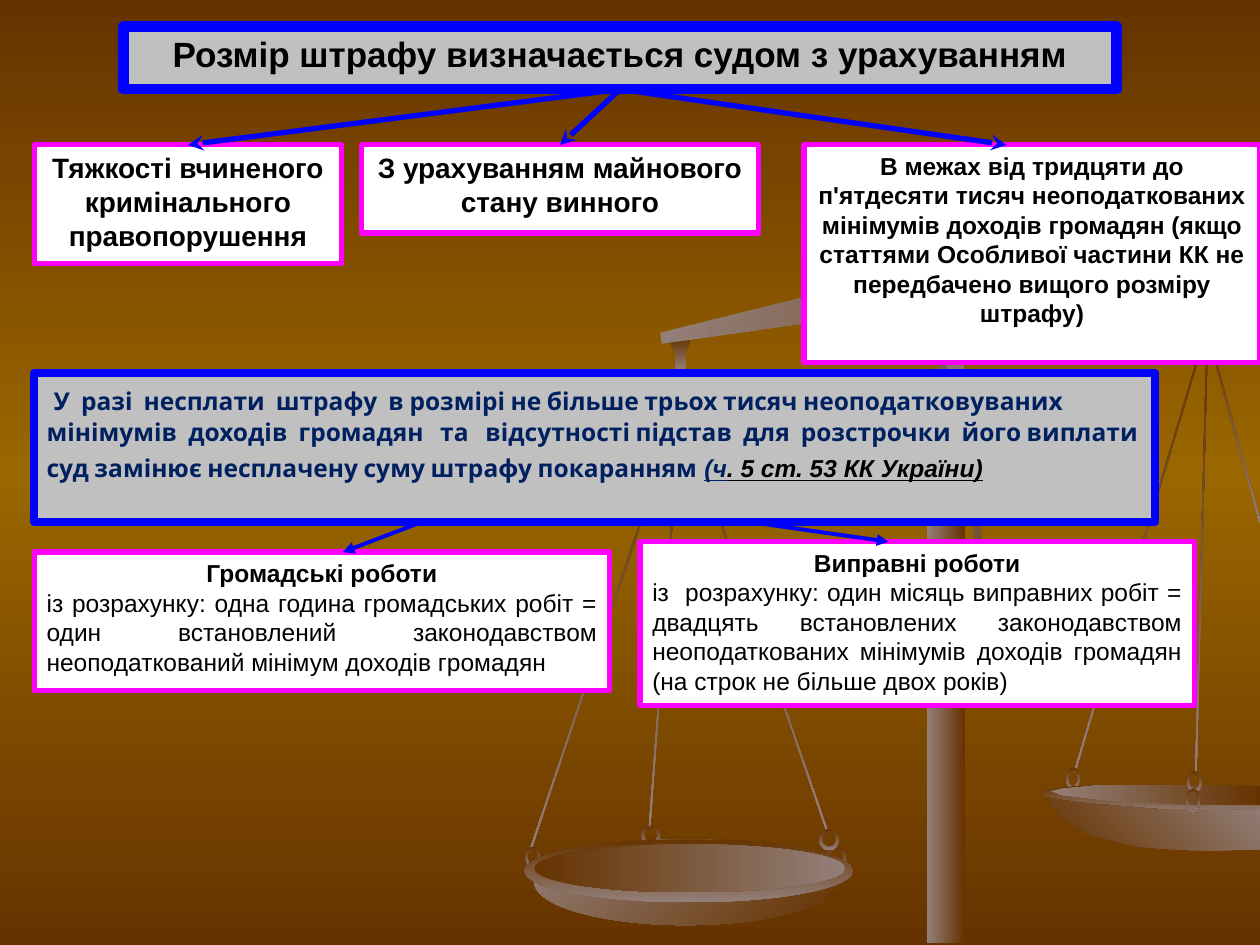
import copy
from dataclasses import dataclass

import lxml.etree
import pptx
import pptx.dml.color
import pptx.enum.shapes
import pptx.enum.text
import pptx.oxml.ns
import pptx.util

Cm, Pt = pptx.util.Cm, pptx.util.Pt
SHAPE = pptx.enum.shapes.MSO_SHAPE
ALIGN = pptx.enum.text.PP_ALIGN
qn = pptx.oxml.ns.qn

COLORS = {
    "brown": "663300", "ochre": "996600", "taupe": "937F79", "silver": "C0C0C0",
    "white": "FFFFFF", "black": "000000", "blue": "0000FF", "magenta": "FF00FF",
    "navy": "002060",
}


@dataclass
class Part:
    """Piece of the scales; angle is the clockwise gradient direction."""
    kind: object
    box: tuple
    angle: float = 90
    light_first: bool = False
    rotation: float = 0


@dataclass
class Outline:
    points: list
    angle: float = 90
    light_first: bool = False


@dataclass
class Run:
    text: str
    size: float = 14
    bold: bool = True
    color: str = "black"
    font: str = "Arial"
    emphasis: bool = False  # italic and underlined


@dataclass
class Box:
    rect: tuple
    paragraphs: list  # (alignment, runs)
    fill: str = "white"
    border: str = "magenta"
    width: float = 3


@dataclass
class Arrow:
    start: tuple
    end: tuple
    width: float = 3
    head: str = "stealth"


def rope(x, y, height, rotation):
    return Part(SHAPE.RECTANGLE, (x, y, 0.03, height), rotation=rotation)


def ring(*box):
    return Part(SHAPE.DONUT, box)


SCALES = [
    rope(22.96, 6.6, 9.14, 16.6),
    ring(21.49, 15.47, 0.28, 0.43),
    rope(24.21, 6.76, 8.81, 1.5),
    rope(24.87, 6.71, 3.89, 344.6),
    rope(15.19, 8, 8.97, 341),
    rope(12.17, 8.03, 9.35, 18.6),
    rope(13.39, 8.26, 8.41, 4.2),
    Outline([(25.4, 15.9), (24.33, 15.85), (21.6, 15.85), (21, 15.95), (21.06, 16.05),
             (21.64, 16.2), (22.7, 16.31), (24.33, 16.38), (25.4, 16.38)]),
    Outline([(21.11, 16.08), (21.39, 16.48), (21.97, 16.84), (22.94, 17.07), (23.57, 17.12),
             (24.31, 17.15), (25.4, 17.12), (25.4, 16.33), (23.32, 16.31), (21.77, 16.18)], 315),
    Outline([(25.4, 15.85), (24.28, 15.82), (22.3, 15.82), (21.41, 15.9), (21.18, 15.95),
             (21.41, 16.03), (22.3, 16.13), (23.7, 16.21), (25.4, 16.23)], 0, True),
    Outline([(13.94, 6.81), (13.49, 6.86), (13.61, 7.11), (13.61, 7.47), (13.82, 7.47),
             (13.82, 7.09)]),
    ring(13.49, 7.44, 0.41, 0.43),
    ring(23.93, 15.54, 0.3, 0.43),
    Outline([(24.71, 4.98), (24.79, 5.28), (13.34, 6.93), (13.31, 6.71), (18.72, 5.38),
             (19.28, 5.31)], 0, True),
    ring(12.93, 16.64, 0.38, 0.41),
    ring(16.66, 17.07, 0.41, 0.48),
    ring(10.59, 17.07, 0.3, 0.41),
    Part(SHAPE.OVAL, (10.77, 16.92, 6.1, 1.73), 45, True),
    Part(SHAPE.OVAL, (10.57, 16.92, 6.63, 1.27)),
    Part(SHAPE.OVAL, (10.77, 17.02, 6.27, 0.97), 0),
    ring(16.51, 16.71, 0.41, 0.43),
    ring(23.9, 15.9, 0.3, 0.48),
    Part(SHAPE.RECTANGLE, (18.69, 7.82, 0.76, 11.2), 0, True),
    Part(SHAPE.RECTANGLE, (18.9, 6.81, 0.33, 1.07)),
    Outline([(20.09, 13.69), (19.05, 7.11), (19, 6.81), (19.3, 6.73), (19.38, 7.04)], 45, True),
]

TITLE = Box((2.49, 0.53, 20.02, 1.27),
            [(ALIGN.CENTER, [Run("Розмір штрафу визначається судом з урахуванням", 20)])],
            "silver", "blue", 6)
CRITERIA = [
    Box((0.69, 2.92, 6.2, 2.39),
        [(ALIGN.CENTER, [Run("Тяжкості вчиненого кримінального правопорушення", 16)])]),
    Box((7.29, 2.92, 8, 1.78),
        [(ALIGN.CENTER, [Run("З урахуванням майнового стану винного", 16)])]),
    Box((16.21, 2.92, 9.19, 4.39),
        [(ALIGN.CENTER, [Run("В межах від тридцяти до п'ятдесяти тисяч неоподаткованих мінімумів "
                             "доходів громадян (якщо статтями Особливої частини КК не "
                             "передбачено вищого розміру штрафу)")])]),
]
REPLACEMENT = [
    Box((0.69, 7.52, 22.6, 3), [(ALIGN.LEFT, [
        Run(" ", 18, False, "navy", "Cabin"),
        Run("У  разі  несплати  штрафу  в розмірі не більше трьох тисяч неоподатковуваних  "
            "мінімумів  доходів  громадян   та   відсутності підстав  для  розстрочки  його "
            "виплати суд замінює несплачену суму штрафу покаранням", color="navy", font="Cabin"),
        Run(" ", 18, color="navy", font="Cabin"),
        Run("(ч", color="navy", emphasis=True),
        Run(". 5 ст. 53 КК України)", emphasis=True),
    ])], "silver", "blue", 4.5),
    Box((0.69, 11.13, 11.6, 2.79), [
        (ALIGN.CENTER, [Run("Громадські роботи")]),
        (ALIGN.JUSTIFY, [Run("із розрахунку: одна година громадських робіт = один встановлений "
                             "законодавством неоподаткований мінімум доходів громадян",
                             bold=False)])]),
    Box((12.9, 10.92, 11.18, 3.3), [
        (ALIGN.CENTER, [Run("Виправні роботи")]),
        (ALIGN.JUSTIFY, [Run("із  розрахунку: один місяць виправних робіт = двадцять "
                             "встановлених законодавством неоподаткованих мінімумів доходів "
                             "громадян (на строк не більше двох років)", bold=False)])]),
]
CRITERIA_ARROWS = [Arrow((12.5, 1.8), (x, 2.92)) for x in (3.79, 11.29, 20.29)]
REPLACEMENT_ARROWS = [
    Arrow((8.51, 10.52), (6.91, 11.13), 2.25, "triangle"),
    Arrow((15.09, 10.52), (17.91, 10.92), 2.25, "triangle"),
]


def rgb(name: str) -> pptx.dml.color.RGBColor:
    return pptx.dml.color.RGBColor.from_string(COLORS[name])


def set_gradient(fill, first: str, last: str, angle: float) -> None:
    fill.gradient()
    fill.gradient_angle = (360 - angle) % 360
    for stop, name in zip(fill.gradient_stops, (first, last)):
        stop.color.rgb = rgb(name)


def paint_background(s) -> None:
    fill = s.background.fill
    set_gradient(fill, "brown", "ochre", 90)
    stops = s._element.find(".//" + qn("a:gsLst"))
    stops.append(copy.deepcopy(stops[0]))
    for stop, position in zip(fill.gradient_stops, (0, 0.5, 1)):
        stop.position = position


def draw_scales_part(s, part) -> None:
    if isinstance(part, Outline):
        points = [(Cm(x), Cm(y)) for x, y in part.points]
        builder = s.shapes.build_freeform(*points[0])
        builder.add_line_segments(points[1:], close=True)
        sp = builder.convert_to_shape()
    else:
        sp = s.shapes.add_shape(part.kind, *map(Cm, part.box))
        sp.rotation = part.rotation
        if part.kind == SHAPE.DONUT:
            sp.adjustments[0] = 0.15
    sp.shadow.inherit = False
    sp.line.fill.background()
    ends = ("taupe", "brown") if part.light_first else ("brown", "taupe")
    set_gradient(sp.fill, *ends, part.angle)


def format_box(sp, box: Box):
    """Place the shape, colour it and write its text."""
    sp.left, sp.top, sp.width, sp.height = map(Cm, box.rect)
    sp.shadow.inherit = False
    sp.fill.solid()
    sp.fill.fore_color.rgb = rgb(box.fill)
    sp.line.color.rgb = rgb(box.border)
    sp.line.width = Pt(box.width)
    tf = sp.text_frame
    tf.word_wrap = True
    tf.auto_size = pptx.enum.text.MSO_AUTO_SIZE.NONE
    tf.vertical_anchor = pptx.enum.text.MSO_ANCHOR.TOP
    for i, (alignment, runs) in enumerate(box.paragraphs):
        p = tf.add_paragraph() if i else tf.paragraphs[0]
        p.alignment = alignment
        for run in runs:
            r = p.add_run()
            r.text = run.text
            r.font.name, r.font.size, r.font.bold = run.font, Pt(run.size), run.bold
            r.font.italic = r.font.underline = run.emphasis
            r.font.color.rgb = rgb(run.color)
    return sp


def add_box(s, box: Box):
    return format_box(s.shapes.add_shape(SHAPE.RECTANGLE, *map(Cm, box.rect)), box)


def add_arrow(s, arrow: Arrow):
    c = s.shapes.add_connector(pptx.enum.shapes.MSO_CONNECTOR.STRAIGHT,
                               *map(Cm, arrow.start + arrow.end))
    c.line.color.rgb = rgb("blue")
    c.line.width = Pt(arrow.width)
    sp_pr = c._element.spPr
    lxml.etree.SubElement(sp_pr.find(qn("a:ln")), qn("a:tailEnd"), type=arrow.head)
    lxml.etree.SubElement(sp_pr, qn("a:effectLst"))
    return c


def main() -> None:
    prs = pptx.Presentation()
    prs.slide_width, prs.slide_height = Cm(25.4), Cm(19.05)
    s = prs.slides.add_slide(prs.slide_layouts[5])
    paint_background(s)
    for part in SCALES:
        draw_scales_part(s, part)
    title = format_box(s.shapes.title, TITLE)
    criteria = [add_box(s, box) for box in CRITERIA]
    for box in REPLACEMENT:
        add_box(s, box)
    for arrow, sp in zip(CRITERIA_ARROWS, criteria):
        c = add_arrow(s, arrow)
        c.begin_connect(title, 2)
        if sp is not criteria[-1]:  # the last arrow lands off the middle
            c.end_connect(sp, 0)
    for arrow in REPLACEMENT_ARROWS:
        add_arrow(s, arrow)
    prs.save("out.pptx")


if __name__ == "__main__":
    main()
